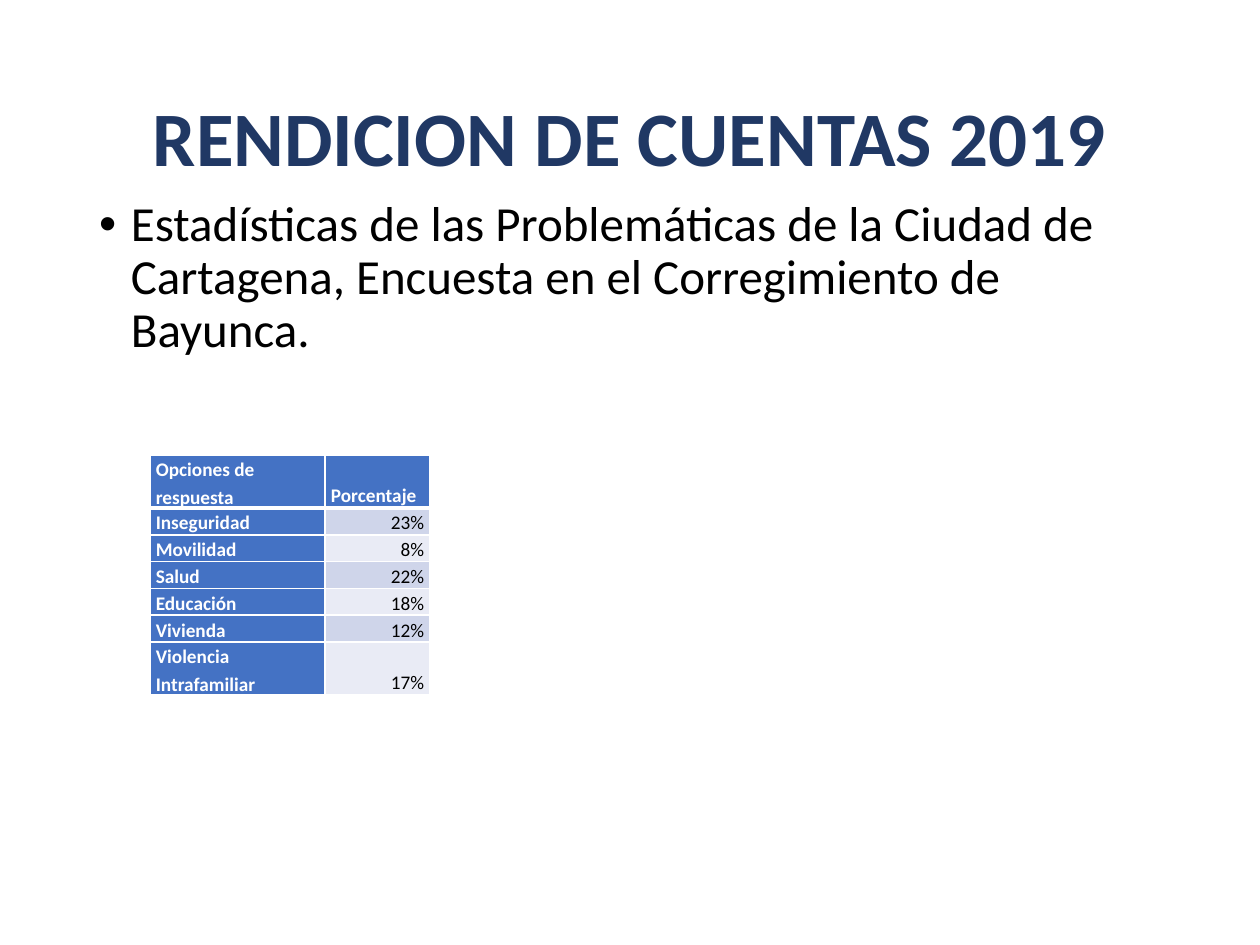
import pptx
import pptx.dml.color
import pptx.enum.text
import pptx.oxml
import pptx.oxml.ns
import pptx.util
from dataclasses import dataclass

Cm = pptx.util.Cm
Pt = pptx.util.Pt
Align = pptx.enum.text.PP_ALIGN
Anchor = pptx.enum.text.MSO_ANCHOR


@dataclass(frozen=True)
class Theme:
    font: str = "Calibri"
    navy: str = "203864"
    blue: str = "4472C4"
    bands: tuple = ("CFD5EA", "E9EBF5")
    white: str = "FFFFFF"
    black: str = "000000"
    title_size: int = 44
    body_size: int = 28
    table_size: int = 11


theme = Theme()


def write(frame, text, color, size, bold=False, **paragraph_format):
    """Fill the frame's first paragraph with formatted text."""
    para = frame.paragraphs[0]
    for name, value in paragraph_format.items():
        setattr(para, name, value)
    span = para.add_run()
    span.text = text
    for name, value in {"name": theme.font, "size": Pt(size), "bold": bold}.items():
        setattr(span.font, name, value)
    span.font.color.rgb = pptx.dml.color.RGBColor.from_string(color)


def add_border(cell, side, width):
    line = pptx.oxml.parse_xml(
        f'<a:ln{side} {pptx.oxml.ns.nsdecls("a")} w="{Pt(width)}">'
        f'<a:solidFill><a:srgbClr val="{theme.white}"/></a:solidFill></a:ln{side}>'
    )
    cell._tc.get_or_add_tcPr().append(line)


deck = pptx.Presentation()
deck.slide_width, deck.slide_height = Cm(25.4), Cm(19.05)
page = deck.slides.add_slide(deck.slide_layouts[6])

# Title
title = page.shapes.add_textbox(Cm(1.75), Cm(1.01), Cm(21.9), Cm(3.68)).text_frame
title.word_wrap = True
title.vertical_anchor = Anchor.MIDDLE
write(title, "RENDICION DE CUENTAS 2019", theme.navy, theme.title_size, bold=True,
      alignment=Align.CENTER, line_spacing=0.9)

# Bulleted introduction
body = page.shapes.add_textbox(Cm(1.75), Cm(3.9), Cm(21.9), Cm(12.09)).text_frame
body.word_wrap = True
properties = body.paragraphs[0]._p.get_or_add_pPr()
properties.set("marL", str(Cm(0.64)))
properties.set("indent", str(-Cm(0.64)))
for bullet in ('<a:buFont {} typeface="Arial"/>', '<a:buChar {} char="•"/>'):
    properties.append(pptx.oxml.parse_xml(bullet.format(pptx.oxml.ns.nsdecls("a"))))
write(body, "Estadísticas de las Problemáticas de la Ciudad de Cartagena, "
            "Encuesta en el Corregimiento de Bayunca.",
      theme.black, theme.body_size, line_spacing=0.9)

# Survey results
survey = [
    ("Opciones de respuesta", "Porcentaje"),
    ("Inseguridad", "23%"),
    ("Movilidad", "8%"),
    ("Salud", "22%"),
    ("Educación", "18%"),
    ("Vivienda", "12%"),
    ("Violencia Intrafamiliar", "17%"),
]
column_widths = [Cm(3.53), Cm(2.12)]
row_height = Cm(0.54)
table = page.shapes.add_table(len(survey), 2, Cm(3.02), Cm(9.17),
                              sum(column_widths), row_height * len(survey)).table
for column, width in zip(table.columns, column_widths):
    column.width = width

cell_format = {
    "margin_left": Cm(0.12), "margin_right": Cm(0.12),
    "margin_top": 0, "margin_bottom": 0, "vertical_anchor": Anchor.BOTTOM,
}
for r, entries in enumerate(survey):
    table.rows[r].height = row_height
    for c, text in enumerate(entries):
        cell = table.cell(r, c)
        for name, value in cell_format.items():
            setattr(cell, name, value)
        top = 3 if r == 1 else 1
        bottom = 3 if r == 0 else 1
        for side, width in {"L": 1, "R": 1, "T": top, "B": bottom}.items():
            add_border(cell, side, width)
        is_label = r == 0 or c == 0
        fill = theme.blue if is_label else theme.bands[(r - 1) % 2]
        cell.fill.solid()
        cell.fill.fore_color.rgb = pptx.dml.color.RGBColor.from_string(fill)
        write(cell.text_frame, text, theme.white if is_label else theme.black,
              theme.table_size, bold=is_label, line_spacing=1.15,
              alignment=Align.LEFT if is_label else Align.RIGHT)

deck.save("out.pptx")
